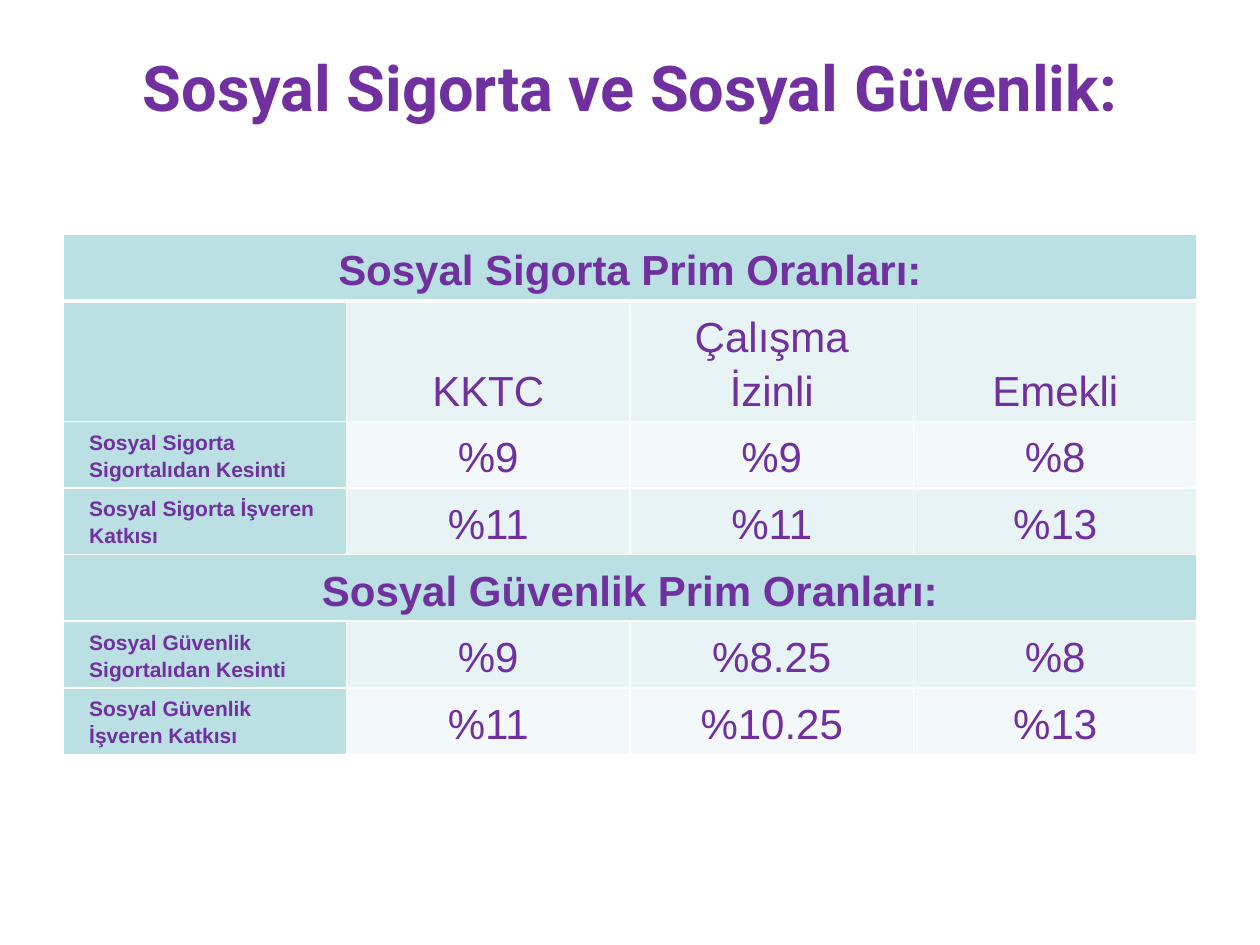
from lxml.etree import SubElement
from pptx import Presentation
from pptx.dml.color import RGBColor
from pptx.enum.text import MSO_ANCHOR as Anchor, MSO_AUTO_SIZE as AutoSize, PP_ALIGN as Align
from pptx.oxml.ns import qn
from pptx.util import Pt

THEME = {
    "text": "7030A0", "head": "BBE0E3", "band_dark": "E7F3F4", "band_light": "F3F9FA",
    "border": "FFFFFF",
    "title_size": 36, "value_size": 24, "label_size": 12,
    "title_font": "Roboto", "accent_font": "Calibri", "table_font": "Arial",
}
ROWS = [
    ["Sosyal Sigorta Prim Oranları:"],
    ["", "KKTC", "Çalışma İzinli", "Emekli"],
    ["Sosyal Sigorta Sigortalıdan Kesinti", "%9", "%9", "%8"],
    ["Sosyal Sigorta İşveren Katkısı", "%11", "%11", "%13"],
    ["Sosyal Güvenlik Prim Oranları:"],
    ["Sosyal Güvenlik Sigortalıdan Kesinti", "%9", "%8.25", "%8"],
    ["Sosyal Güvenlik İşveren Katkısı", "%11", "%10.25", "%13"],
]
COLUMN_COUNT = 4
ROW_HEIGHT, HEADING_HEIGHT = 38, 68


def style_run(run, font_name, size, bold):
    font = run.font
    font.name, font.size, font.bold = font_name, Pt(size), bold
    font.color.rgb = RGBColor.from_string(THEME["text"])


def add_borders(cell, top, bottom):
    """Draw all four cell borders; top and bottom are widths in points."""
    properties = cell._tc.get_or_add_tcPr()
    for tag, width in (("lnL", 1), ("lnR", 1), ("lnT", top), ("lnB", bottom)):
        line = SubElement(properties, qn(f"a:{tag}"), w=str(Pt(width)))
        fill = SubElement(line, qn("a:solidFill"))
        SubElement(fill, qn("a:srgbClr"), val=THEME["border"])


presentation = Presentation()
presentation.slide_width, presentation.slide_height = Pt(720), Pt(540)
slide = presentation.slides.add_slide(presentation.slide_layouts[5])

# Title
title = slide.shapes.title
title.left, title.top, title.width, title.height = Pt(36), Pt(21.6), Pt(648), Pt(55.4)
title.text_frame.auto_size = AutoSize.NONE
title.text_frame.vertical_anchor = Anchor.MIDDLE
paragraph = title.text_frame.paragraphs[0]
paragraph.alignment = Align.CENTER
for text, font_name in (
    ("Sosyal Sigorta ve Sosyal G", THEME["title_font"]),
    ("ü", THEME["accent_font"]),
    ("venlik:", THEME["title_font"]),
):
    run = paragraph.add_run()
    run.text = text
    style_run(run, font_name, THEME["title_size"], True)

# Premium rates table
table_height = ROW_HEIGHT * (len(ROWS) - 1) + HEADING_HEIGHT
table = slide.shapes.add_table(
    len(ROWS), COLUMN_COUNT, Pt(36), Pt(134), Pt(648), Pt(table_height)
).table
for row_index, texts in enumerate(ROWS):
    is_section = len(texts) == 1
    table.rows[row_index].height = Pt(HEADING_HEIGHT if row_index == 1 else ROW_HEIGHT)
    band = THEME["band_dark"] if row_index % 2 else THEME["band_light"]
    for column_index in range(COLUMN_COUNT):
        cell = table.cell(row_index, column_index)
        is_head = is_section or column_index == 0
        add_borders(cell, 3 if row_index == 1 else 1, 3 if row_index == 0 else 1)
        cell.fill.solid()
        cell.fill.fore_color.rgb = RGBColor.from_string(THEME["head"] if is_head else band)
        cell.vertical_anchor = Anchor.BOTTOM
        cell.margin_left = cell.margin_right = Pt(15)
        cell.margin_top = cell.margin_bottom = Pt(3.6)
        if column_index >= len(texts) or not texts[column_index]:
            continue
        is_label = is_head and not is_section
        cell.text_frame.text = texts[column_index]
        paragraph = cell.text_frame.paragraphs[0]
        paragraph.alignment = Align.LEFT if is_label else Align.CENTER
        paragraph.line_spacing = 1.15
        size = THEME["label_size"] if is_label else THEME["value_size"]
        style_run(paragraph.runs[0], THEME["table_font"], size, is_head)
    if is_section:
        table.cell(row_index, 0).merge(table.cell(row_index, COLUMN_COUNT - 1))

presentation.save("out.pptx")
